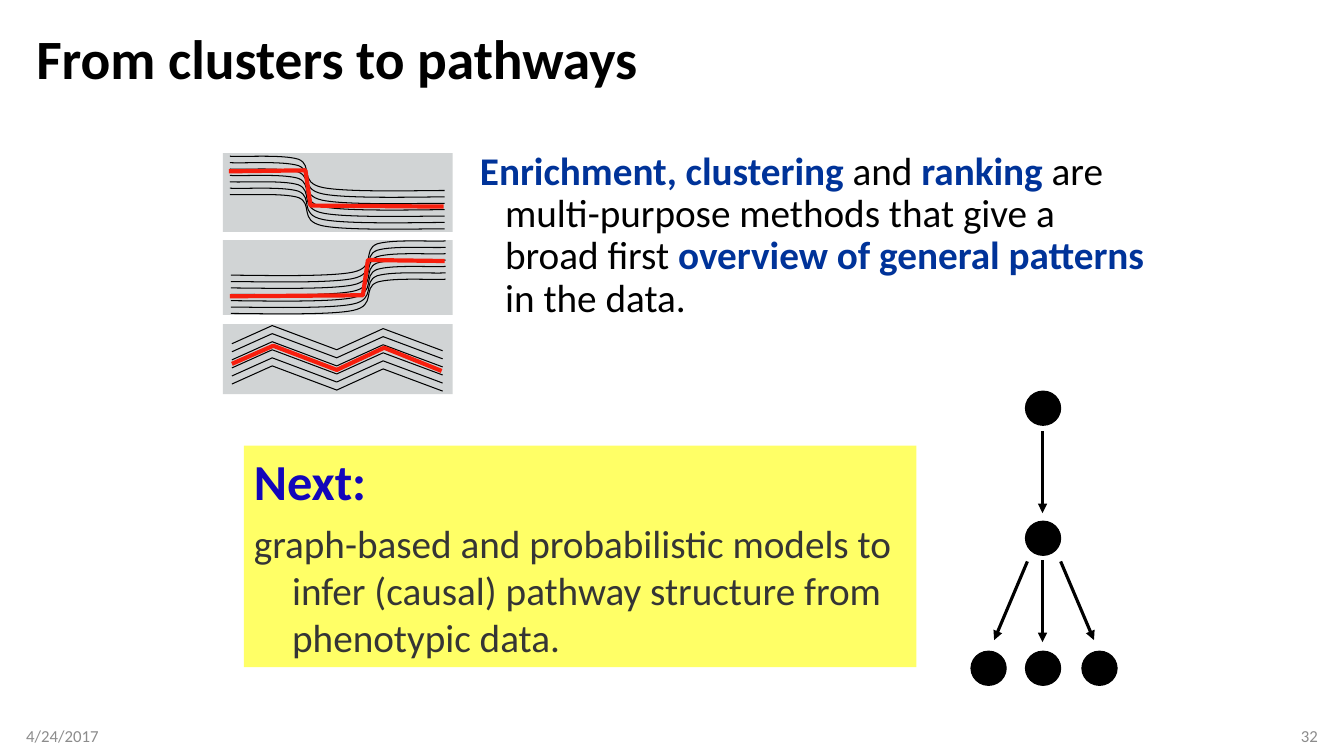
from lxml.etree import SubElement
from pptx import Presentation
from pptx.dml.color import RGBColor
from pptx.enum.shapes import MSO_CONNECTOR, MSO_SHAPE
from pptx.enum.text import MSO_ANCHOR, MSO_AUTO_SIZE, PP_ALIGN
from pptx.oxml.ns import qn
from pptx.util import Inches, Pt

BLACK = RGBColor(0x00, 0x00, 0x00)
WHITE = RGBColor(0xFF, 0xFF, 0xFF)
GRAY = RGBColor(0x8C, 0x8C, 0x8C)
PANEL_GRAY = RGBColor(0xD1, 0xD4, 0xD5)
RED = RGBColor(0xF7, 0x1E, 0x0D)
NAVY = RGBColor(0x00, 0x33, 0x99)
INDIGO = RGBColor(0x13, 0x06, 0xBA)
CHARCOAL = RGBColor(0x35, 0x35, 0x35)
YELLOW = RGBColor(0xFF, 0xFF, 0x66)

TITLE = "From clusters to pathways"
SUMMARY = [
    ("Enrichment, clustering", True),
    (" and ", False),
    ("ranking", True),
    (" are multi-purpose methods that give a broad first ", False),
    ("overview of general patterns", True),
    (" in the data.", False),
]
NEXT_STEPS = [
    ("Next:", 36, INDIGO, True, 0),
    ("graph-based and probabilistic models to infer (causal) pathway structure "
     "from phenotypic data.", 28, CHARCOAL, False, 5.6),
]
FOOTERS = [
    ("4/24/2017", 0.26, PP_ALIGN.LEFT, 0, 0.1),
    ("32", 10.07, PP_ALIGN.RIGHT, 0.1, 0),
]

PANEL_DIVIDERS = [(2.18, 4.52, 2.34), (2.17, 4.5, 3.17)]
STEP_CONTROLS = [
    (2.28, 1.55),
    (2.39, 1.56), (2.8, 1.53), (2.96, 1.58),
    (3.11, 1.64), (2.96, 1.81), (3.2, 1.86),
    (3.44, 1.91), (4.16, 1.89), (4.41, 1.89),
]
STEP_MEAN = [(2.27, 1.7), (3.03, 1.69), (3.08, 2.04), (4.4, 2.05)]
ZIGZAG = [(2.3, 3.41), (2.7, 3.23), (3.34, 3.47), (3.8, 3.26), (4.39, 3.48)]
ZIGZAG_MEAN = [(2.3, 3.61), (2.71, 3.43), (3.34, 3.67), (3.81, 3.45), (4.38, 3.68)]
STEP_COUNT, STEP_SPREAD = 7, 0.38
ZIGZAG_COUNT, ZIGZAG_SPREAD = 6, 0.4

NODE_WIDTH, NODE_HEIGHT = 0.35, 0.34
NODES = [(10.17, 3.88), (10.17, 5.17), (9.63, 6.46), (10.17, 6.46), (10.73, 6.46)]
ARROWS = [
    ((10.34, 4.28), (10.34, 5.09)),
    ((10.19, 5.57), (9.86, 6.35)),
    ((10.34, 5.56), (10.34, 6.37)),
    ((10.52, 5.57), (10.85, 6.35)),
]


def place(shape, left, top, width, height):
    shape.left, shape.top = Inches(left), Inches(top)
    shape.width, shape.height = Inches(width), Inches(height)


def set_font(font, size, color, bold=False):
    font.name, font.size, font.bold = "Calibri", Pt(size), bold
    font.color.rgb = color


def set_hanging(paragraph, indent):
    properties = paragraph._p.get_or_add_pPr()
    properties.set("marL", str(Inches(indent)))
    properties.set("indent", str(-Inches(indent)))
    SubElement(properties, qn("a:buNone"))


def add_preset(shapes, kind, left, top, width, height, fill):
    shape = shapes.add_shape(kind, *map(Inches, (left, top, width, height)))
    shape.shadow.inherit = False
    shape.fill.solid()
    shape.fill.fore_color.rgb = fill
    shape.line.fill.background()
    return shape


def add_line(shapes, start, end, color, width, arrow=False):
    line = shapes.add_connector(MSO_CONNECTOR.STRAIGHT, *map(Inches, start + end))
    line.line.color.rgb, line.line.width = color, Pt(width)
    if arrow:
        SubElement(line.line._get_or_add_ln(), qn("a:tailEnd"), type="triangle")
    SubElement(line._element.spPr, qn("a:effectLst"))


def add_profile(shapes, points, color=BLACK, width=0.75, curved=False):
    corners = [(Inches(x), Inches(y)) for x, y in points]
    builder = shapes.build_freeform(*corners[0])
    builder.add_line_segments(corners[1:], close=False)
    profile = builder.convert_to_shape()
    profile.shadow.inherit = False
    profile.fill.background()
    profile.line.color.rgb, profile.line.width = color, Pt(width)
    if curved:
        bend_segments(profile)


def bend_segments(profile):
    outline = next(profile._element.iter(qn("a:path")))
    segments = outline.findall(qn("a:lnTo"))
    for first in range(0, len(segments), 3):
        curve = SubElement(outline, qn("a:cubicBezTo"))
        for segment in segments[first:first + 3]:
            curve.append(segment[0])
            outline.remove(segment)


def shifted(points, drop):
    return [(x, y + drop) for x, y in points]


def mirrored(points, axis_sum, drop):
    return [(axis_sum - x, y + drop) for x, y in points]


def add_cluster_panels(slide):
    shapes = slide.shapes.add_group_shape().shapes
    add_preset(shapes, MSO_SHAPE.RECTANGLE, 2.21, 1.52, 2.28, 2.39, PANEL_GRAY)
    for left, right, top in PANEL_DIVIDERS:
        add_line(shapes, (left, top), (right, top), WHITE, 6)
    rising = mirrored(STEP_CONTROLS, 6.7, 0.84)
    clusters = [
        (STEP_CONTROLS, STEP_COUNT, STEP_SPREAD, STEP_MEAN, True),
        (rising, STEP_COUNT, STEP_SPREAD, mirrored(STEP_MEAN, 6.68, 0.89), True),
        (ZIGZAG, ZIGZAG_COUNT, ZIGZAG_SPREAD, ZIGZAG_MEAN, False),
    ]
    for profile, count, spread, mean, curved in clusters:
        for index in range(count):
            drop = index * spread / (count - 1)
            add_profile(shapes, shifted(profile, drop), curved=curved)
        add_profile(shapes, mean, RED, 3)


def add_pathway(slide):
    shapes = slide.shapes.add_group_shape().shapes
    for left, top in NODES:
        node = add_preset(shapes, MSO_SHAPE.OVAL, left, top, NODE_WIDTH, NODE_HEIGHT, BLACK)
        node.line.color.rgb, node.line.width = BLACK, Pt(0.75)
    for start, end in ARROWS:
        add_line(shapes, start, end, BLACK, 2.25, arrow=True)


def fill_placeholders(slide):
    title, body = slide.shapes.title, slide.placeholders[1]
    place(title, 0.26, 0.25, 12.81, 0.72)
    title.text_frame.text = TITLE
    title.text_frame.vertical_anchor = MSO_ANCHOR.MIDDLE
    title.text_frame.auto_size = MSO_AUTO_SIZE.NONE
    paragraph = title.text_frame.paragraphs[0]
    paragraph.alignment, paragraph.line_spacing = PP_ALIGN.LEFT, 0.9
    set_font(paragraph.font, 39.6, BLACK, True)

    place(body, 4.66, 1.45, 6.84, 1.89)
    body.text_frame.auto_size = MSO_AUTO_SIZE.NONE
    paragraph = body.text_frame.paragraphs[0]
    set_hanging(paragraph, 0.25)
    paragraph.line_spacing, paragraph.space_before = 0.9, Pt(0)
    for text, key_term in SUMMARY:
        run = paragraph.add_run()
        run.text = text
        set_font(run.font, 28, NAVY if key_term else BLACK, key_term)


def add_next_box(slide):
    box = add_preset(slide.shapes, MSO_SHAPE.RECTANGLE, 2.42, 4.42, 6.67, 2.2, YELLOW)
    frame = box.text_frame
    frame.word_wrap, frame.vertical_anchor = True, MSO_ANCHOR.TOP
    for index, (text, size, color, bold, space) in enumerate(NEXT_STEPS):
        paragraph = frame.add_paragraph() if index else frame.paragraphs[0]
        paragraph.text, paragraph.alignment = text, PP_ALIGN.LEFT
        set_hanging(paragraph, 0.38)
        paragraph.space_before = Pt(space)
        set_font(paragraph.font, size, color, bold)


def add_footers(slide):
    for text, left, alignment, left_inset, right_inset in FOOTERS:
        box = slide.shapes.add_textbox(*map(Inches, (left, 7.1, 3, 0.4)))
        frame = box.text_frame
        frame.word_wrap, frame.vertical_anchor = True, MSO_ANCHOR.MIDDLE
        frame.margin_left, frame.margin_right = Inches(left_inset), Inches(right_inset)
        paragraph = frame.paragraphs[0]
        paragraph.text, paragraph.alignment = text, alignment
        set_font(paragraph.font, 12, GRAY)


def main():
    """Build the slide that leads from clusters to pathways."""
    presentation = Presentation()
    presentation.slide_width, presentation.slide_height = Inches(13.33), Inches(7.5)
    slide = presentation.slides.add_slide(presentation.slide_layouts[1])
    fill_placeholders(slide)
    add_footers(slide)
    add_cluster_panels(slide)
    add_next_box(slide)
    add_pathway(slide)
    presentation.save("out.pptx")


if __name__ == "__main__":
    main()
